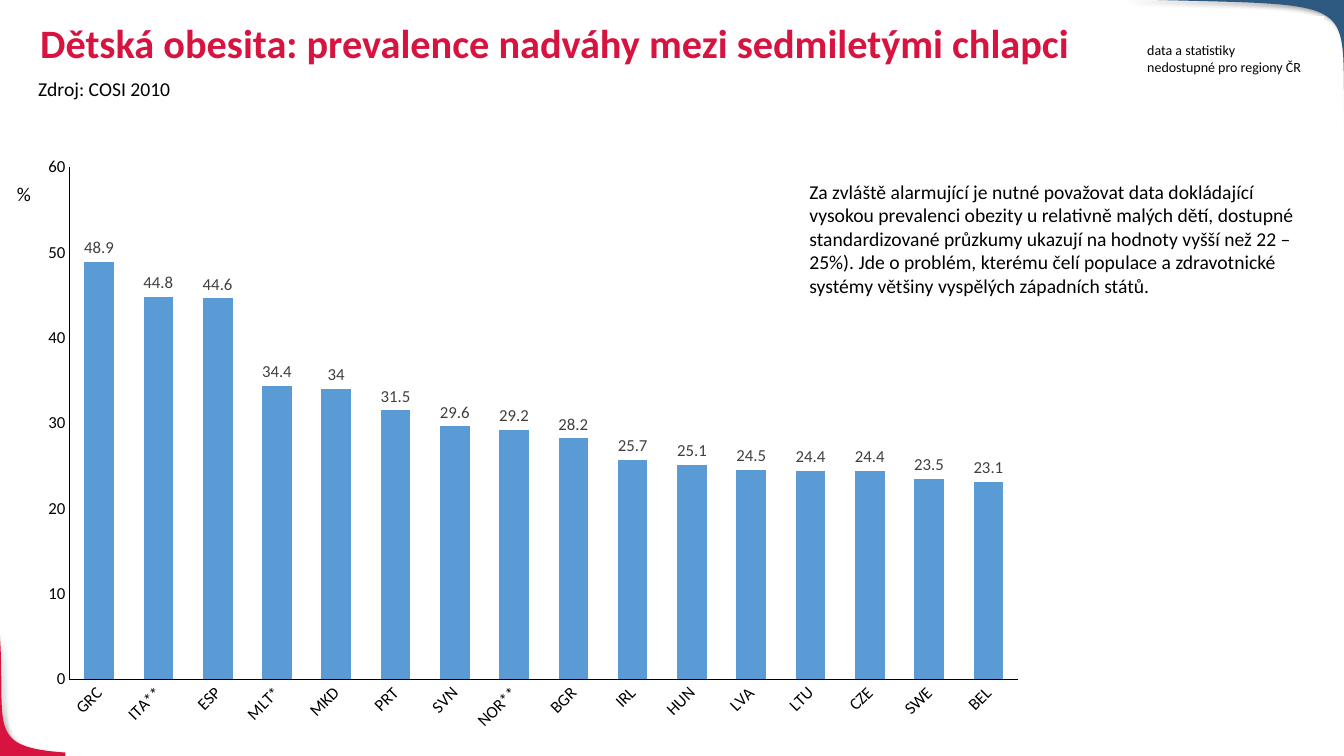
from lxml import etree
from pptx import Presentation
from pptx.chart import data
from pptx.dml.color import RGBColor
from pptx.enum import chart as kinds, shapes, text
from pptx.oxml import ns
from pptx.util import Pt

FONT = "Calibri"
HEX = {"red": "D71440", "blue": "2E5980", "bar": "5B9BD5",
       "black": "000000", "grey": "404040", "white": "FFFFFF"}
RATES = {"GRC": 48.9, "ITA**": 44.8, "ESP": 44.6, "MLT*": 34.4,
         "MKD": 34, "PRT": 31.5, "SVN": 29.6, "NOR**": 29.2,
         "BGR": 28.2, "IRL": 25.7, "HUN": 25.1, "LVA": 24.5,
         "LTU": 24.4, "CZE": 24.4, "SWE": 23.5, "BEL": 23.1}


def color(name):
    return RGBColor.from_string(HEX[name])


def paint(fill, name):
    fill.solid()
    fill.fore_color.rgb = color(name)


def style(font, size, name="black", bold=False):
    font.name, font.size, font.bold = FONT, Pt(size), bold
    font.color.rgb = color(name)


def write(slide, box, words, size=14, name="black", bold=False, inset=7.2,
          space=None):
    """Add a text box with one paragraph for each line of words."""
    frame = slide.shapes.add_textbox(*map(Pt, box)).text_frame
    frame.word_wrap = True
    frame.margin_left = Pt(inset)
    frame.vertical_anchor = text.MSO_ANCHOR.TOP
    frame.text = words
    for para in frame.paragraphs:
        para.line_spacing = space
        style(para.runs[0].font, size, name, bold)


def patch(slide, box):
    """Add a plain white area."""
    area = slide.shapes.add_shape(shapes.MSO_SHAPE.RECTANGLE, *map(Pt, box))
    area.shadow.inherit = False
    paint(area.fill, "white")
    area.line.fill.background()


def shade(shape):
    """Give the shape a soft outer shadow."""
    shape.shadow.inherit = False
    glow = shape._element.spPr.find(ns.qn("a:effectLst"))
    outer = etree.SubElement(
        glow, ns.qn("a:outerShdw"), blurRad=str(Pt(4)), dist=str(Pt(3)),
        dir="2700000", algn="tl", rotWithShape="0")
    tone = etree.SubElement(outer, ns.qn("a:srgbClr"), val=HEX["black"])
    etree.SubElement(tone, ns.qn("a:alpha"), val="40000")


def corner(slide, curve, tip, name, steps=48):
    """Fill the area between a cubic curve and the corner point tip."""
    spots = []
    for i in range(steps + 1):
        t = i / steps
        parts = ((1 - t) ** 3, 3 * t * (1 - t) ** 2, 3 * t * t * (1 - t), t ** 3)
        spots.append(tuple(Pt(sum(w * p[axis] for w, p in zip(parts, curve)))
                           for axis in (0, 1)))
    spots.append(tuple(map(Pt, tip)))
    pen = slide.shapes.build_freeform(*spots[0], scale=1.0)
    pen.add_line_segments(spots[1:], close=True)
    shape = pen.convert_to_shape()
    paint(shape.fill, name)
    shape.line.fill.background()
    shade(shape)


def frame_page(slide, wide, high):
    corner(slide, [(153.4, high + 0.7), (-24.5, high - 4.3),
                   (5.8, high + 6.5), (0, high - 86.4)],
           (-0.7, high + 0.7), "red")
    corner(slide, [(wide - 160, -0.7), (wide + 26.4, 5),
                   (wide - 5.3, -7.2), (wide + 1.2, 102.2)],
           (wide + 1.2, -0.7), "blue")
    patch(slide, (46.8, 483.8, wide - 46.8, 56.9))


def bars(slide, box):
    source = data.CategoryChartData()
    source.categories = list(RATES)
    source.add_series("Series 1", list(RATES.values()))
    chart = slide.shapes.add_chart(
        kinds.XL_CHART_TYPE.COLUMN_CLUSTERED, *map(Pt, box), source).chart
    chart.has_legend = chart.has_title = False
    style(chart.font, 10)

    plot = chart.plots[0]
    plot.vary_by_categories = False
    plot.gap_width, plot.overlap = 100, -27
    paint(plot.series[0].format.fill, "bar")
    plot.has_data_labels = True
    labels = plot.data_labels
    labels.show_value = True
    labels.position = kinds.XL_LABEL_POSITION.OUTSIDE_END
    style(labels.font, 12, "grey")

    for axis in (chart.category_axis, chart.value_axis):
        axis.has_major_gridlines = False
        axis.major_tick_mark = axis.minor_tick_mark = kinds.XL_TICK_MARK.NONE
        axis.format.line.width = Pt(0.75)
        paint(axis.format.line.fill, "black")
        style(axis.tick_labels.font, 12)
    chart.value_axis.minimum_scale = 0
    chart.value_axis.maximum_scale = 60
    chart.value_axis.major_unit = 10
    turn = chart.category_axis._element.find(
        ns.qn("c:txPr")).find(ns.qn("a:bodyPr"))
    turn.set("rot", "-2700000")
    turn.set("vert", "horz")


def note(slide, box):
    """Place the remark on missing regional data on a white area."""
    left, top, wide, high = box
    patch(slide, (left, top, wide - 13.7, high - 2))
    write(slide, (left, top + 14.4, wide, 31.7),
          "data a statistiky\nnedostupné pro regiony ČR", size=10, inset=27.5)


def main():
    deck = Presentation()
    deck.slide_width, deck.slide_height = Pt(960), Pt(540)
    slide = deck.slides.add_slide(deck.slide_layouts[6])
    frame_page(slide, 960, 540)
    write(slide, (20.2, 51.1, 869, 24.5), "Zdroj: COSI 2010")
    write(slide, (571, 124.6, 361.4, 92.9),
          "Za zvláště alarmující je nutné považovat data dokládající vysokou "
          "prevalenci obezity u relativně malých dětí, dostupné "
          "standardizované průzkumy ukazují na hodnoty vyšší než 22 – 25%). "
          "Jde o problém, kterému čelí populace a zdravotnické systémy "
          "většiny vyspělých západních států.")
    bars(slide, (20.2, 103.7, 721.4, 427))
    write(slide, (5, 126.7, 30.2, 24.5), "%")
    write(slide, (21.6, 13, 828, 49.7),
          "Dětská obesita: prevalence nadváhy mezi sedmiletými chlapci",
          size=28.8, name="red", bold=True, space=0.9)
    note(slide, (792, 11.5, 167.8, 46))
    deck.save("out.pptx")


if __name__ == "__main__":
    main()
